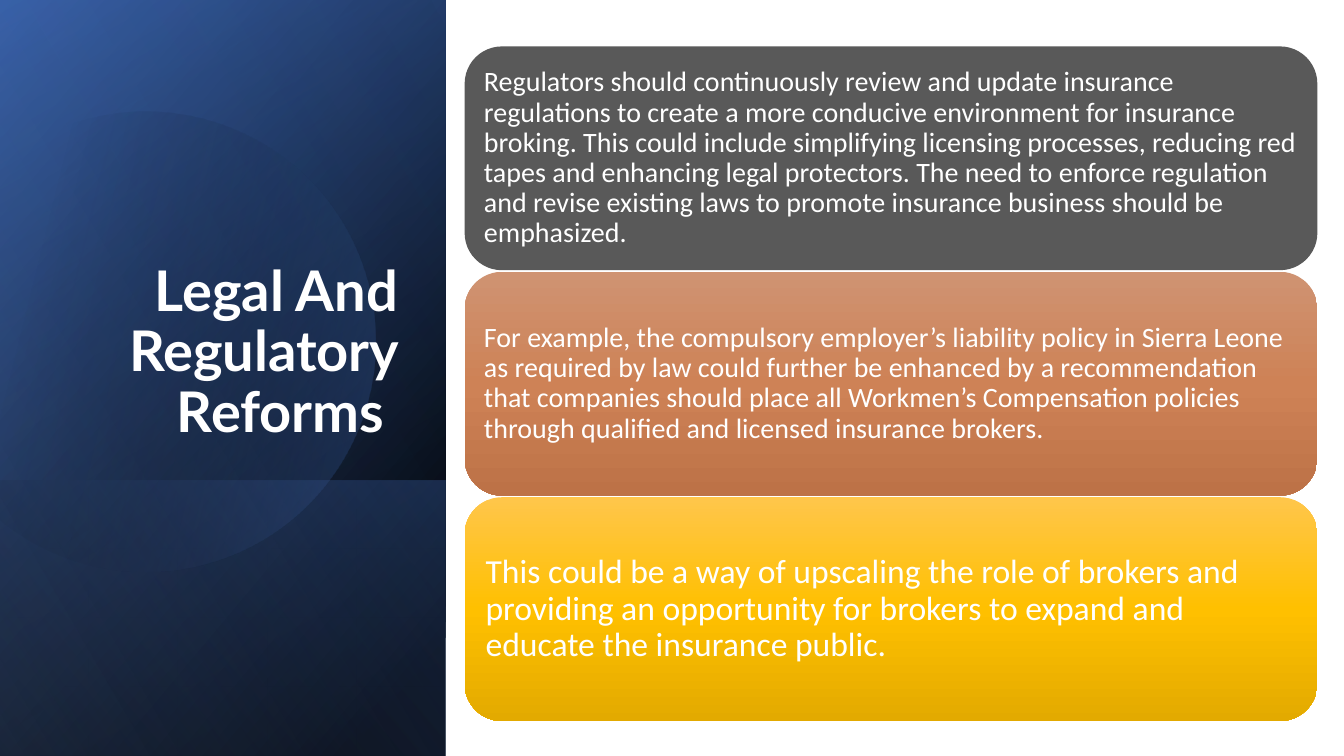
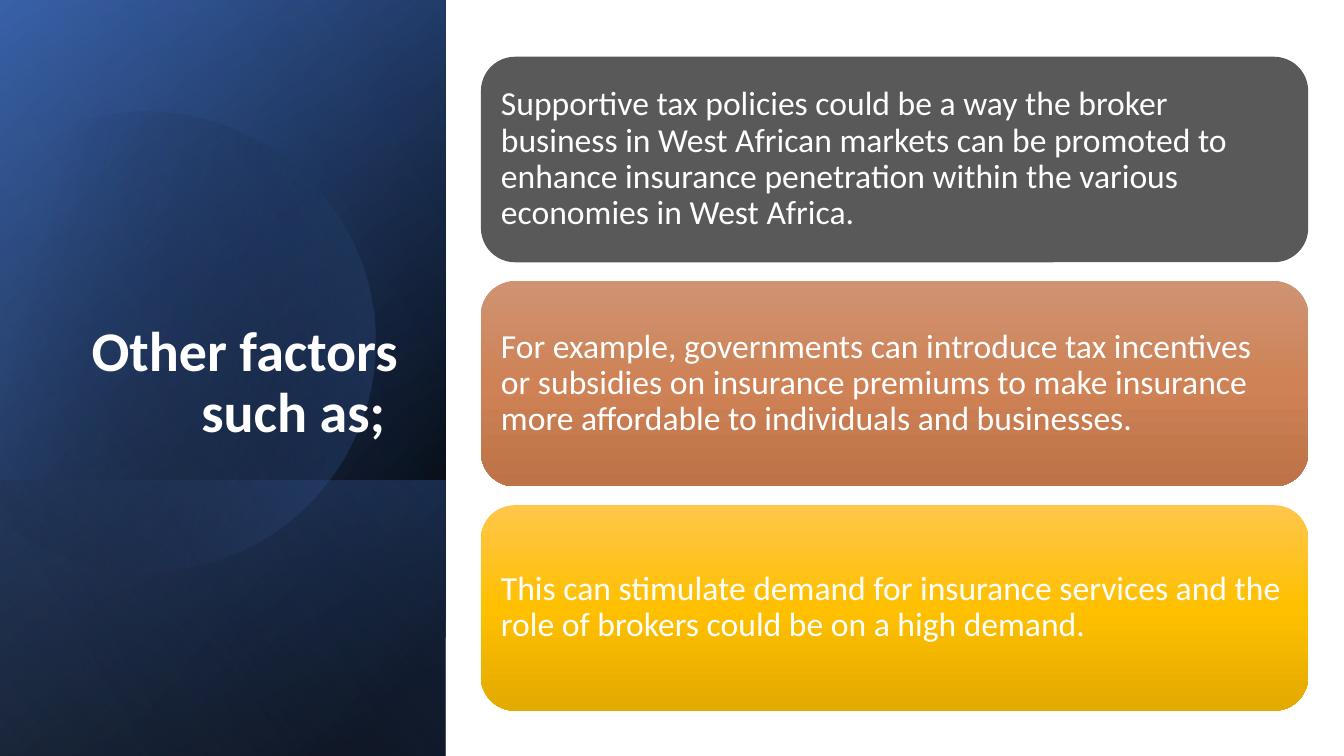
import math

from lxml import etree
from pptx import Presentation
from pptx.dml.color import RGBColor
from pptx.enum.shapes import MSO_SHAPE
from pptx.enum.text import MSO_ANCHOR, MSO_AUTO_SIZE, PP_ALIGN
from pptx.oxml.ns import qn
from pptx.util import Cm, Pt

RECT, ROUND_RECT = MSO_SHAPE.RECTANGLE, MSO_SHAPE.ROUNDED_RECTANGLE
MIDDLE, BOTTOM = MSO_ANCHOR.MIDDLE, MSO_ANCHOR.BOTTOM
LEFT, RIGHT = PP_ALIGN.LEFT, PP_ALIGN.RIGHT

WHITE, GRAY = "FFFFFF", "595959"
SLIDE_W, SLIDE_H = 33.87, 19.05
BAND_W = 11.23
LOWER_H = 6.95

# Gradient stops are (position %, colour, opacity %)
# Band layers: height, stops, angle
BASE_LAYERS = [
    (SLIDE_H, [(8, "000000", 100), (100, "2F5597", 100)], 50),
    (SLIDE_H, [(0, "000000", 0), (99, "4472C4", 46)], 30),
    (LOWER_H, [(2, "4472C4", 29), (100, "000000", 30)], 130),
]
TOP_LAYER = (SLIDE_H, [(0, "000000", 0), (99, "8FAADC", 11)], 120)
DISC_STOPS = [(29, "000000", 0), (100, "4472C4", 43)]
DISC_X, DISC_Y, DISC_R = 3.64, 8.5, 5.8
DISC_TILT = -16.1
DISC_ANGLES = [-117.9, -90, 0, 90, 150.1]  # ends of the arcs, before the tilt

CARD_FILLS = [
    GRAY,
    [(0, "CF9372", 100), (50, "CE8256", 100), (100, "BD7247", 100)],
    [(0, "FFC64B", 100), (50, "FFC000", 100), (100, "E3AA00", 100)],
]

# Cards: left, top, width, height, pitch in cm, then (size, text) of each card
SLIDES = [
    ("Legal And Regulatory Reforms ", "Lato", (11.71, 1.17, 21.49, 5.64, 5.68), [
        (20, "Regulators should continuously review and update insurance regulations "
             "to create a more conducive environment for insurance broking. This could "
             "include simplifying licensing processes, reducing red tapes and enhancing "
             "legal protectors. The need to enforce regulation and revise existing laws "
             "to promote insurance business should be emphasized."),
        (20, "For example, the compulsory employer’s liability policy in Sierra Leone "
             "as required by law could further be enhanced by a recommendation that "
             "companies should place all Workmen’s Compensation policies through "
             "qualified and licensed insurance brokers."),
        (24, "This could be a way of upscaling the role of brokers and providing an "
             "opportunity for brokers to expand and educate the insurance public."),
    ]),
    ("Other factors such as; ", "Calibri", (12.12, 1.43, 20.85, 5.18, 5.65), [
        (24, "Supportive tax policies could be a way the broker business in West African "
             "markets can be promoted to enhance insurance penetration within the "
             "various economies in West Africa."),
        (24, "For example, governments can introduce tax incentives or subsidies on "
             "insurance premiums to make insurance more affordable to individuals and "
             "businesses."),
        (24, "This can stimulate demand for insurance services and the role of brokers "
             "could be on a high demand."),
    ]),
]


def paint(sp, fill, angle=0):
    """Fill with a colour or gradient stops (angle clockwise); no line, no shadow."""
    sp.shadow.inherit = False
    sp.line.fill.background()
    if isinstance(fill, str):
        sp.fill.solid()
        sp.fill.fore_color.rgb = RGBColor.from_string(fill)
        return
    sp.fill.gradient()
    grad = sp.element.spPr.find(qn("a:gradFill"))
    gs_list = grad.find(qn("a:gsLst"))
    for gs in list(gs_list):
        gs_list.remove(gs)
    for pos, color, opacity in fill:
        gs = etree.SubElement(gs_list, qn("a:gs"), pos=str(pos * 1000))
        clr = etree.SubElement(gs, qn("a:srgbClr"), val=color)
        if opacity < 100:
            etree.SubElement(clr, qn("a:alpha"), val=str(opacity * 1000))
    grad.find(qn("a:lin")).set("ang", str(angle * 60000))


def write(tf, text, font, size, align, anchor):
    tf.word_wrap = True
    tf.auto_size = MSO_AUTO_SIZE.NONE
    tf.vertical_anchor = anchor
    tf.text = text
    p = tf.paragraphs[0]
    p.alignment = align
    p.line_spacing = 0.9
    p.font.name = font
    p.font.size = Pt(size)
    p.font.color.rgb = RGBColor.from_string(WHITE)
    return p


# Start point of the disc, then two handles and an end point for each arc
disc = []
for a0, a1 in zip(DISC_ANGLES, DISC_ANGLES[1:]):
    a0, a1 = math.radians(a0), math.radians(a1)
    k = 4 / 3 * math.tan((a1 - a0) / 4)
    for a, pull in [(a0, 0), (a0, k), (a1, -k), (a1, 0)]:
        point = (Cm(DISC_X + DISC_R * (math.cos(a) - pull * math.sin(a))),
                 Cm(DISC_Y + DISC_R * (math.sin(a) + pull * math.cos(a))))
        if pull or a == a1 or not disc:
            disc.append(point)

prs = Presentation()
prs.slide_width, prs.slide_height = Cm(SLIDE_W), Cm(SLIDE_H)

for title_text, title_font, (left, top, width, height, pitch), cards in SLIDES:
    s = prs.slides.add_slide(prs.slide_layouts[5])

    # Band on the left: quarter-turned rectangles with a clipped disc between them
    for layer in BASE_LAYERS + [None, TOP_LAYER]:
        if layer is None:
            fb = s.shapes.build_freeform(*disc[0])
            fb.add_line_segments(disc[1:], close=True)
            sp = fb.convert_to_shape()
            lines = list(sp.element.iter(qn("a:lnTo")))
            for i in range(0, len(disc) - 1, 3):  # three points make one curve
                curve = etree.Element(qn("a:cubicBezTo"))
                lines[i].addprevious(curve)
                for line in lines[i:i + 3]:
                    curve.append(line[0])
                    line.getparent().remove(line)
            sp.rotation = DISC_TILT
            paint(sp, DISC_STOPS, 30)
            continue
        layer_h, stops, angle = layer
        sp = s.shapes.add_shape(RECT, Cm((BAND_W - layer_h) / 2),
                                Cm(SLIDE_H - (layer_h + BAND_W) / 2),
                                Cm(layer_h), Cm(BAND_W))
        sp.rotation = 90
        sp.element.spPr.xfrm.set("flipH", "1")
        paint(sp, stops, angle)

    title = s.shapes.title
    title.left, title.top, title.width, title.height = Cm(1.62), Cm(4.68), Cm(8.66), Cm(6.65)
    p = write(title.text_frame, title_text, title_font, 40, RIGHT, BOTTOM)
    p.font.bold = True
    s.shapes.element.append(title.element)  # in front of the band

    for i, ((size, text), fill) in enumerate(zip(cards, CARD_FILLS)):
        sp = s.shapes.add_shape(ROUND_RECT, Cm(left), Cm(top + i * pitch),
                                Cm(width), Cm(height))
        paint(sp, fill, 90)
        tf = sp.text_frame
        inset = Pt(size * 0.3)
        tf.margin_left = tf.margin_right = tf.margin_top = tf.margin_bottom = inset
        write(tf, text, "Calibri", size, LEFT, MIDDLE)

prs.save("out.pptx")
